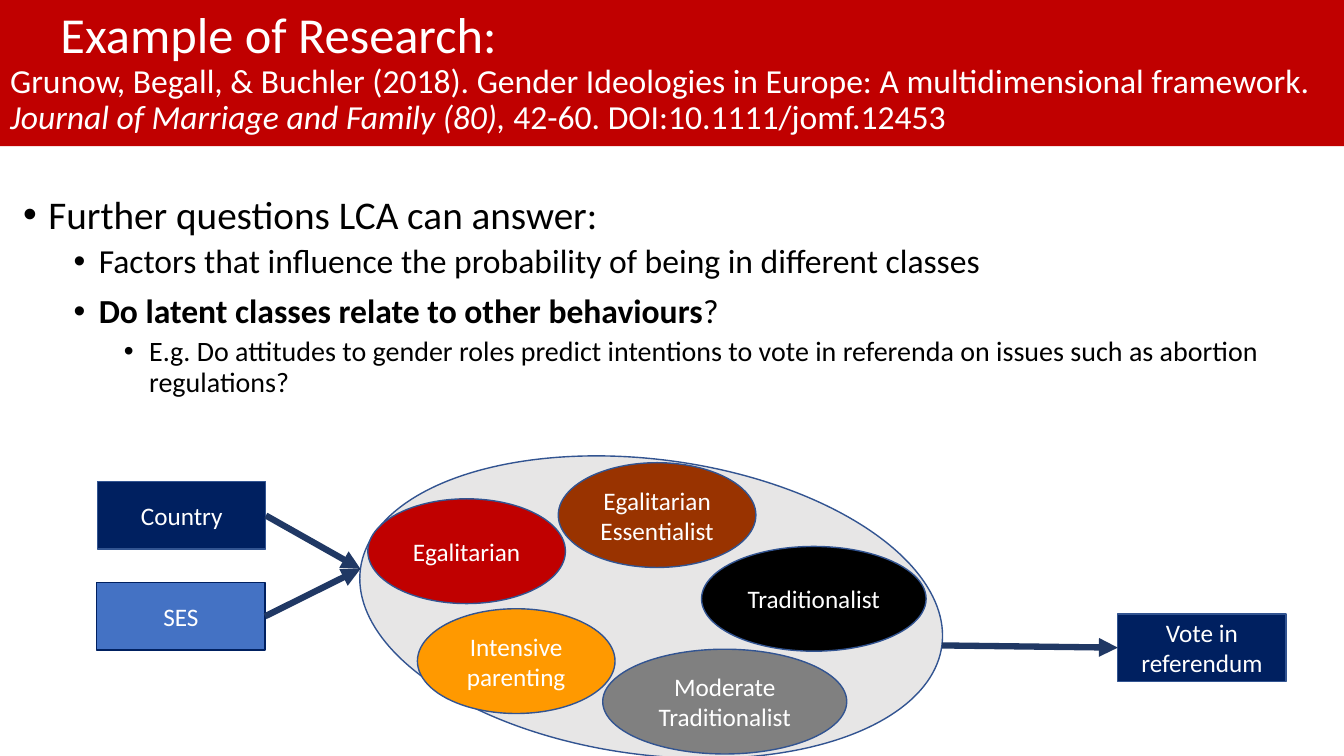
from dataclasses import dataclass
from math import cos, radians, sin

from lxml import etree
from pptx import Presentation
from pptx.dml.color import RGBColor
from pptx.enum import shapes, text
from pptx.oxml import ns
from pptx.util import Cm, Pt


@dataclass(frozen=True)
class Theme:
    """Hold the colours, font and type sizes of the slide."""
    font: str = "Calibri"
    white: str = "FFFFFF"
    black: str = "000000"
    red: str = "C00000"
    navy: str = "002060"
    blue: str = "4472C4"
    outline: str = "325491"
    arrow: str = "203864"
    pale: str = "E7E6E6"
    brown: str = "993300"
    orange: str = "FF9900"
    grey: str = "808080"
    heading: int = 36
    citation: int = 24
    label: int = 18
    levels: tuple = (28, 24, 20)


T = Theme()
ELLIPSE = shapes.MSO_SHAPE.OVAL
RECT = shapes.MSO_SHAPE.RECTANGLE
BOX_SIZE = (4.24, 1.7)
CLASS_HEIGHT = 2.64


def assign(obj, formats):
    """Set every attribute named in a dict of format values."""
    for name, value in formats.items():
        setattr(obj, name, value)


def place(sp, left, top, width, height):
    """Move and size a shape in centimetres."""
    assign(sp, {"left": Cm(left), "top": Cm(top), "width": Cm(width), "height": Cm(height)})


def paint(fill, color):
    """Give a fill one solid colour."""
    fill.solid()
    fill.fore_color.rgb = RGBColor.from_string(color)


def add_run(p, words, size, color, **formats):
    """Append a formatted run to a paragraph."""
    r = p.add_run()
    r.text = words
    assign(r.font, {"name": T.font, "size": Pt(size), **formats})
    r.font.color.rgb = RGBColor.from_string(color)


def fill_title(sp):
    """Format the title band and write the heading and citation."""
    place(sp, 0, 0, 33.87, 3.68)
    paint(sp.fill, T.red)
    assign(sp.text_frame, {"vertical_anchor": text.MSO_ANCHOR.MIDDLE, "word_wrap": True,
                           "auto_size": text.MSO_AUTO_SIZE.NONE})
    p = sp.text_frame.paragraphs[0]
    assign(p, {"alignment": text.PP_ALIGN.LEFT, "line_spacing": 0.9})
    add_run(p, "\t", T.citation, T.white)
    add_run(p, "Example of Research:", T.heading, T.white)
    p.add_line_break()
    add_run(p, "Grunow, Begall, & Buchler (2018). Gender Ideologies in Europe: "
               "A multidimensional framework. ", T.citation, T.white)
    add_run(p, "Journal of Marriage and Family (80), ", T.citation, T.white, italic=True)
    add_run(p, "42-60. DOI:10.1111/jomf.12453", T.citation, T.white)


def fill_list(sp, box, items):
    """Write bulleted items of (level, [(words, bold), ...]) in a placeholder."""
    place(sp, *box)
    tf = sp.text_frame
    assign(tf, {"word_wrap": True, "auto_size": text.MSO_AUTO_SIZE.NONE,
                "vertical_anchor": text.MSO_ANCHOR.TOP})
    for i, (level, runs) in enumerate(items):
        p = tf.add_paragraph() if i else tf.paragraphs[0]
        assign(p, {"level": level, "line_spacing": 0.9, "space_after": Pt(0),
                   "space_before": Pt(5 if level else 10)})
        pPr = p._p.get_or_add_pPr()
        pPr.set("marL", str(Cm(0.635 + 1.27 * level)))
        pPr.set("indent", str(-Cm(0.635)))
        etree.SubElement(pPr, ns.qn("a:buFont")).set("typeface", "Arial")
        etree.SubElement(pPr, ns.qn("a:buChar")).set("char", "•")
        for words, bold in runs:
            add_run(p, words, T.levels[level], T.black, bold=bold)


def add_node(s, kind, box, fill, label="", line=T.outline):
    """Draw a filled, outlined shape with an optional centred label."""
    sp = s.shapes.add_shape(kind, *map(Cm, box))
    sp.shadow.inherit = False
    paint(sp.fill, fill)
    paint(sp.line.fill, line)
    sp.line.width = Pt(1)
    if label:
        assign(sp.text_frame, {"word_wrap": True, "vertical_anchor": text.MSO_ANCHOR.MIDDLE})
        p = sp.text_frame.paragraphs[0]
        p.alignment = text.PP_ALIGN.CENTER
        add_run(p, label, T.label, T.white)
    return sp


def axis_end(sp, side):
    """Return the left (-1) or right (1) end of a turned ellipse's long axis."""
    angle, reach = radians(sp.rotation), side * sp.width / 2
    return (int(sp.left + sp.width / 2 + reach * cos(angle)),
            int(sp.top + sp.height / 2 + reach * sin(angle)))


def add_arrow(s, start, end, source=None, target=None):
    """Draw an arrow, joined to a source's right or a target's left side."""
    c = s.shapes.add_connector(shapes.MSO_CONNECTOR.STRAIGHT, *start, *end)
    if source is not None:
        c.begin_connect(source, 3)
    if target is not None:
        c.end_connect(target, 1)
    paint(c.line.fill, T.arrow)
    c.line.width = Pt(4.5)
    etree.SubElement(c.line._get_or_add_ln(), ns.qn("a:tailEnd")).set("type", "triangle")
    etree.SubElement(c._element.spPr, ns.qn("a:effectLst"))


def add_diagram(s):
    """Draw predictors, latent classes and outcome with their arrows."""
    group = add_node(s, ELLIPSE, (9.02, 11.58, 14.78, 7.44), T.pale)
    group.rotation = 7.5
    for label, left, top, width, fill in (
        ("Egalitarian", 9.27, 12.57, 4.98, T.red),
        ("Traditionalist", 17.68, 13.77, 5.66, T.black),
        ("Egalitarian Essentialist", 14.07, 11.66, 4.98, T.brown),
        ("Intensive parenting", 10.52, 15.34, 4.98, T.orange),
        ("Moderate Traditionalist", 15.19, 16.36, 6.15, T.grey),
    ):
        add_node(s, ELLIPSE, (left, top, width, CLASS_HEIGHT), fill, label)
    entry, way_out = axis_end(group, -1), axis_end(group, 1)
    for label, left, top, fill, line in (
        ("Country", 2.46, 12.14, T.navy, T.outline),
        ("SES", 2.44, 14.68, T.blue, T.navy),
    ):
        predictor = add_node(s, RECT, (left, top, *BOX_SIZE), fill, label, line)
        add_arrow(s, entry, entry, source=predictor)
    outcome = add_node(s, RECT, (28.17, 15.47, *BOX_SIZE), T.navy, "Vote in referendum")
    add_arrow(s, way_out, way_out, target=outcome)


def main():
    """Build and save the slide."""
    prs = Presentation()
    assign(prs, {"slide_width": Cm(33.87), "slide_height": Cm(19.05)})
    s = prs.slides.add_slide(prs.slide_layouts.get_by_name("Two Content"))
    fill_title(s.shapes.title)
    fill_list(s.placeholders[1], (0.33, 4.8, 28.75, 12.09), [
        (0, [("Further questions LCA can answer:", False)]),
        (1, [("Factors that influence the probability of being in different classes", False)]),
    ])
    fill_list(s.placeholders[2], (0.33, 7.29, 32.41, 11.7), [
        (1, [("Do latent classes relate to other behaviours", True), ("?", False)]),
        (2, [("E.g. Do attitudes to gender roles predict intentions to vote in referenda "
              "on issues such as abortion regulations?", False)]),
    ])
    add_diagram(s)
    prs.save("out.pptx")


if __name__ == "__main__":
    main()
